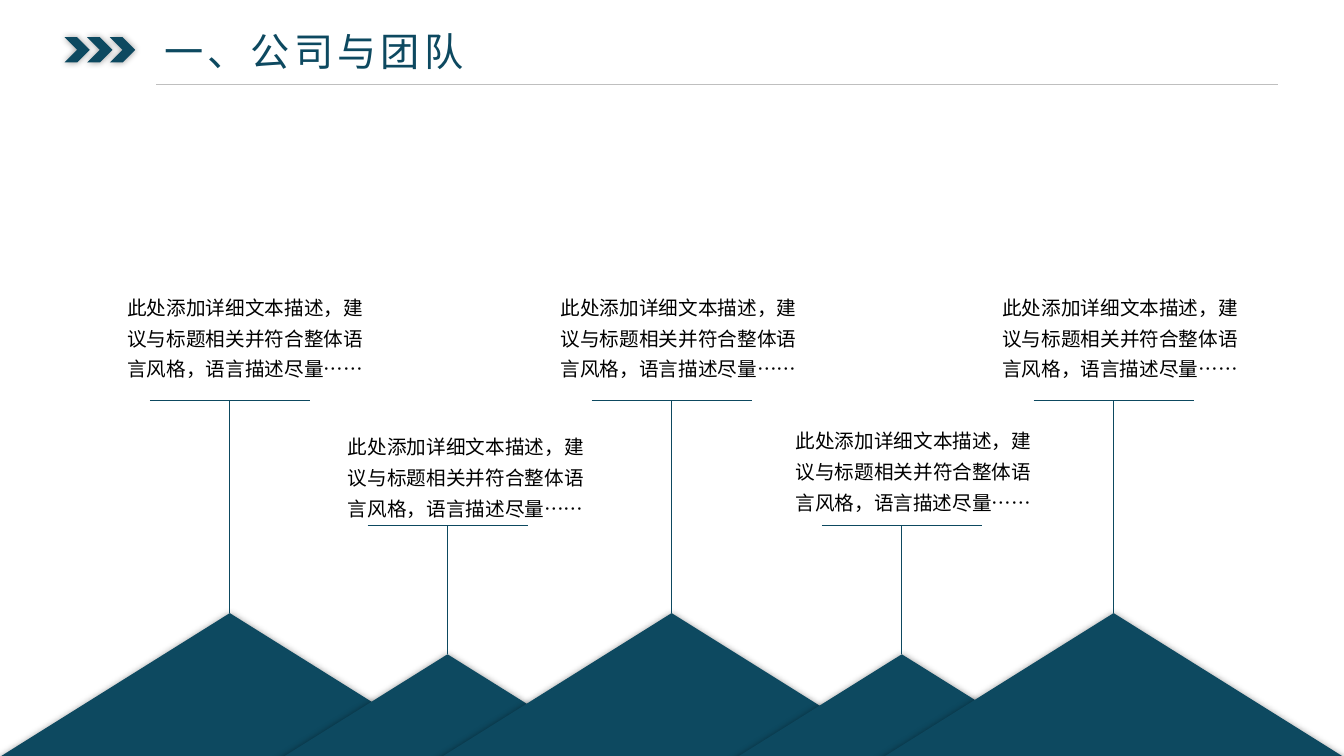
import lxml.etree
import pptx
import pptx.dml.color
import pptx.enum.shapes
import pptx.enum.text
import pptx.oxml.ns
import pptx.util

COLORS = {"navy": "0D4960", "rule": "BFBFBF", "ink": "000000"}
BASE = 103.2
BAR_HALF = 5.95
TALL = {"apex": 81.1, "half": 19.88, "bar": 52.93}
SHORT = {"apex": 86.55, "half": 15, "bar": 69.45}
CAPTION = "此处添加详细文本描述，建议与标题相关并符合整体语言风格，语言描述尽量……"
PEAKS = [
    (17.1, TALL, 8.18, 37.6),
    (33.3, SHORT, 24.6, 56),
    (49.98, TALL, 40.43, 37.6),
    (67.1, SHORT, 57.9, 55.2),
    (82.86, TALL, 73.28, 37.6),
]


class PeakSlide:
    """Draws styled elements on a slide divided into 100 columns and 100 rows."""

    def __init__(self, deck):
        self.column = deck.slide_width / 100
        self.row = deck.slide_height / 100
        self.shapes = deck.slides.add_slide(deck.slide_layouts[6]).shapes

    def at(self, x, y):
        return round(x * self.column), round(y * self.row)

    def color(self, key):
        return pptx.dml.color.RGBColor.from_string(COLORS[key])

    def solid(self, shape):
        shape.fill.solid()
        shape.fill.fore_color.rgb = self.color("navy")
        shape.line.fill.background()
        shape.shadow.inherit = False
        effects = shape._element.spPr.find(pptx.oxml.ns.qn("a:effectLst"))
        glow = lxml.etree.SubElement(
            effects, pptx.oxml.ns.qn("a:outerShdw"),
            blurRad=str(pptx.util.Pt(5)), dist="0", dir="0", algn="ctr", rotWithShape="0")
        black = lxml.etree.SubElement(glow, pptx.oxml.ns.qn("a:srgbClr"), val=COLORS["ink"])
        lxml.etree.SubElement(black, pptx.oxml.ns.qn("a:alpha"), val="40000")

    def chevron(self, x, y, width, height):
        kind = pptx.enum.shapes.MSO_SHAPE.CHEVRON
        self.solid(self.shapes.add_shape(kind, *self.at(x, y), *self.at(width, height)))

    def mountain(self, x, apex, half):
        outline = self.shapes.build_freeform(*self.at(x + half, BASE))
        outline.add_line_segments([self.at(x - half, BASE), self.at(x, apex)], close=True)
        self.solid(outline.convert_to_shape())

    def line(self, start, end, color="navy"):
        kind = pptx.enum.shapes.MSO_CONNECTOR.STRAIGHT
        rule = self.shapes.add_connector(kind, *self.at(*start), *self.at(*end))
        rule.line.color.rgb = self.color(color)
        rule.line.width = pptx.util.Pt(0.5)
        lxml.etree.SubElement(rule._element.spPr, pptx.oxml.ns.qn("a:effectLst"))

    def text(self, words, x, y, width, height, *, size, font, color="ink",
             align="LEFT", leading=1.0, tracking=0, insets=(0.1, 0.05)):
        frame = self.shapes.add_textbox(*self.at(x, y), *self.at(width, height)).text_frame
        frame.word_wrap = True
        frame.auto_size = pptx.enum.text.MSO_AUTO_SIZE.SHAPE_TO_FIT_TEXT
        frame.margin_left = frame.margin_right = pptx.util.Inches(insets[0])
        frame.margin_top = frame.margin_bottom = pptx.util.Inches(insets[1])
        paragraph = frame.paragraphs[0]
        paragraph.alignment = getattr(pptx.enum.text.PP_ALIGN, align)
        paragraph.line_spacing = leading
        run = paragraph.add_run()
        run.text = words
        run.font.size = pptx.util.Pt(size)
        run.font.color.rgb = self.color(color)
        run.font.name = font
        properties = run.font._element
        properties.set("lang", "zh-CN")
        properties.set("spc", str(tracking * 100))
        lxml.etree.SubElement(properties, pptx.oxml.ns.qn("a:ea"), typeface=font)


def main():
    deck = pptx.Presentation()
    deck.slide_width = pptx.util.Inches(13.33)
    deck.slide_height = pptx.util.Inches(7.5)
    slide = PeakSlide(deck)

    for step in range(3):
        slide.chevron(4.8 + step * 1.69, 4.93, 1.88, 3.33)
    slide.text("一、公司与团队", 11.62, 3.07, 43.5, 7.33, size=28, font="Noto Sans CJK JP",
               color="navy", tracking=3, insets=(0.08, 0.04))
    slide.line((11.62, 11.12), (95.1, 11.12), "rule")

    for x, peak, _, _ in PEAKS:
        slide.mountain(x, peak["apex"], peak["half"])
    for x, peak, left, top in PEAKS:
        slide.line((x, peak["apex"]), (x, peak["bar"]))
        slide.line((x - BAR_HALF, peak["bar"]), (x + BAR_HALF, peak["bar"]))
        slide.text(CAPTION, left, top, 19.58, 13.4, size=14, font="Noto Sans CJK SC",
                   align="RIGHT", leading=1.3)

    deck.save("out.pptx")


if __name__ == "__main__":
    main()
